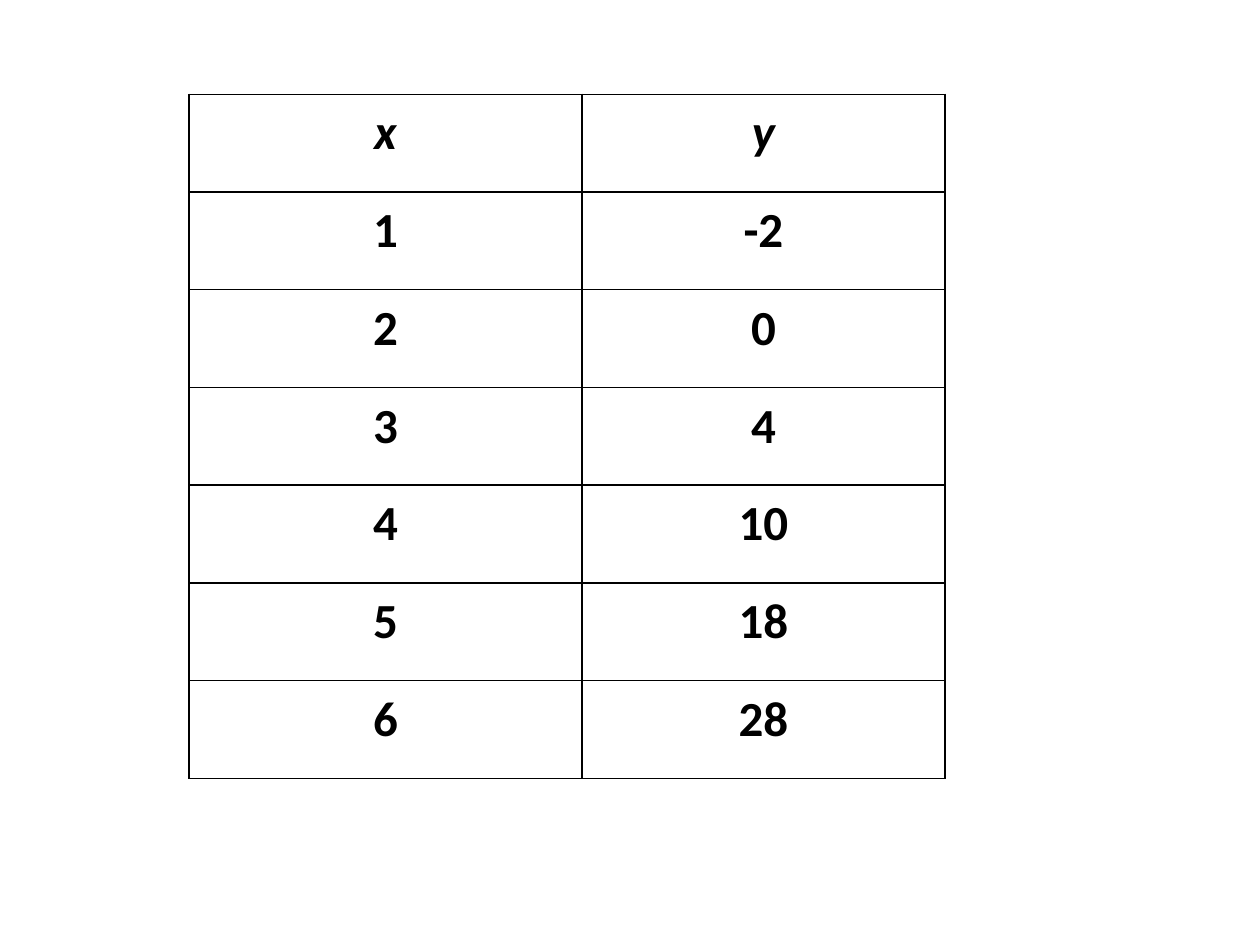
import lxml.etree
import pptx
import pptx.dml.color
import pptx.enum.text
import pptx.oxml.ns
import pptx.util
from pptx.util import Cm

BLACK = pptx.dml.color.RGBColor(0x00, 0x00, 0x00)
BLANK_LAYOUT = 6
COLUMN_WIDTHS = [Cm(7.92), Cm(7.32)]
ROW_HEIGHT = Cm(1.97)
BORDER_WIDTH = pptx.util.Pt(1)
HEADINGS = ("x", "y")
POINTS = [(1, -2), (2, 0), (3, 4), (4, 10), (5, 18), (6, 28)]

CELL_FORMAT = {
    "margin_left": Cm(0.19),
    "margin_right": Cm(0.19),
    "margin_top": 0,
    "margin_bottom": 0,
    "vertical_anchor": pptx.enum.text.MSO_ANCHOR.TOP,
}
PARAGRAPH_FORMAT = {
    "alignment": pptx.enum.text.PP_ALIGN.CENTER,
    "line_spacing": 1.15,
}
FONT_FORMAT = {"name": "Calibri", "size": pptx.util.Pt(28), "bold": True}


def apply_format(target, values):
    for name, value in values.items():
        setattr(target, name, value)


def add_borders(cell):
    """Draw a solid line on all four sides; call before setting the fill."""
    properties = cell._tc.get_or_add_tcPr()
    qn = pptx.oxml.ns.qn
    for side in ("a:lnL", "a:lnR", "a:lnT", "a:lnB"):
        line = lxml.etree.SubElement(properties, qn(side), w=str(BORDER_WIDTH))
        fill = lxml.etree.SubElement(line, qn("a:solidFill"))
        lxml.etree.SubElement(fill, qn("a:srgbClr"), val=str(BLACK))


def fill_cell(cell, text, italic):
    apply_format(cell, CELL_FORMAT)
    add_borders(cell)
    cell.fill.background()
    para = cell.text_frame.paragraphs[0]
    apply_format(para, PARAGRAPH_FORMAT)
    span = para.add_run()
    span.text = text
    apply_format(span.font, FONT_FORMAT)
    span.font.italic = italic
    span.font.color.rgb = BLACK


def add_value_table(page, left, top):
    rows = [HEADINGS, *POINTS]
    frame = page.shapes.add_table(
        len(rows), len(HEADINGS), left, top,
        sum(COLUMN_WIDTHS), ROW_HEIGHT * len(rows),
    )
    table = frame.table
    apply_format(table, {"first_row": False, "horz_banding": False})
    for column, width in zip(table.columns, COLUMN_WIDTHS):
        column.width = width
    for row_index, values in enumerate(rows):
        table.rows[row_index].height = ROW_HEIGHT
        for column_index, value in enumerate(values):
            cell = table.cell(row_index, column_index)
            fill_cell(cell, str(value), italic=row_index == 0)


def main():
    deck = pptx.Presentation()
    deck.slide_width, deck.slide_height = Cm(25.4), Cm(19.05)
    page = deck.slides.add_slide(deck.slide_layouts[BLANK_LAYOUT])
    add_value_table(page, Cm(3.81), Cm(1.9))
    deck.save("out.pptx")


if __name__ == "__main__":
    main()
